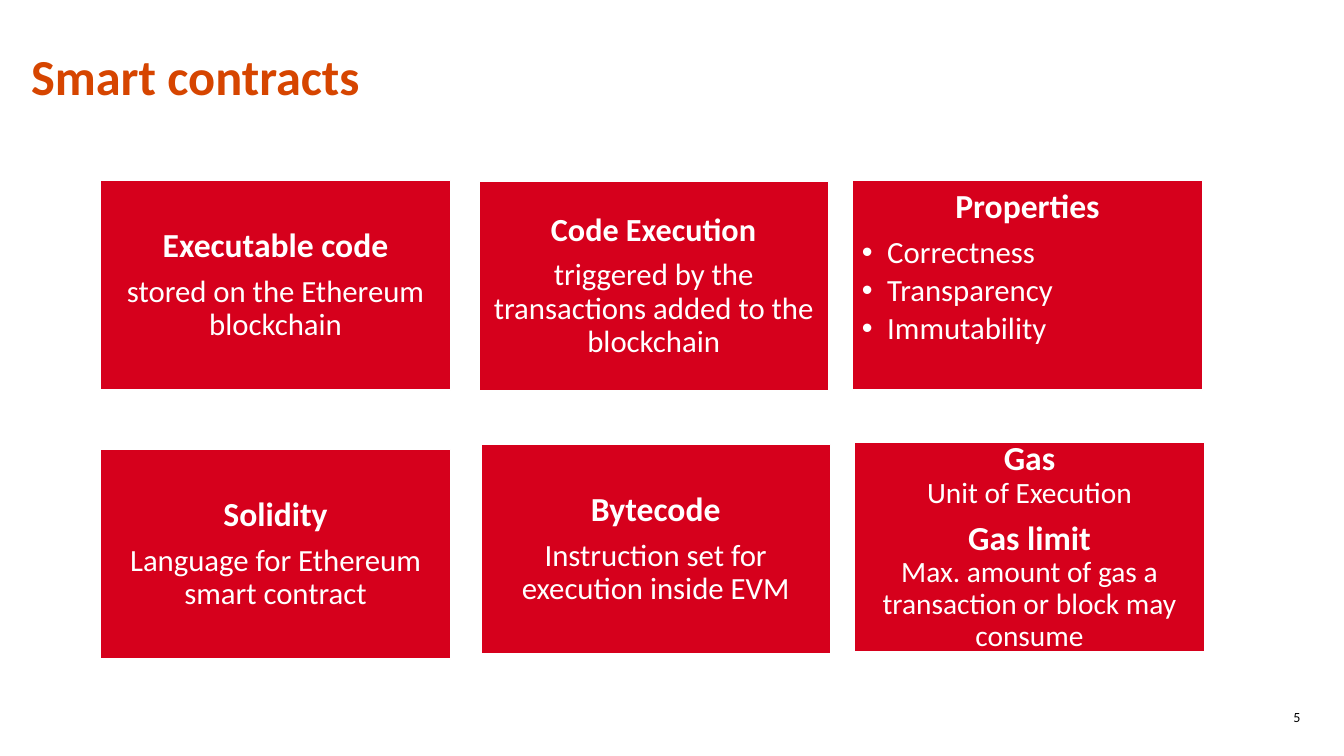
"""Build the smart contracts slide with six fact cards."""
from dataclasses import dataclass

from lxml.etree import SubElement
from pptx import Presentation
from pptx.dml.color import RGBColor
from pptx.enum.shapes import MSO_SHAPE
from pptx.enum.text import MSO_ANCHOR, MSO_AUTO_SIZE, PP_ALIGN
from pptx.oxml.ns import qn
from pptx.slide import Slide
from pptx.text.text import TextFrame, _Paragraph as Paragraph
from pptx.util import Cm, Pt

ORANGE = RGBColor(0xD6, 0x45, 0x00)
RED = RGBColor(0xD6, 0x00, 0x1C)
WHITE = RGBColor(0xFF, 0xFF, 0xFF)
BLACK = RGBColor(0x00, 0x00, 0x00)
FONT = "Calibri"
CARD_WIDTH, CARD_HEIGHT = Cm(8.81), Cm(5.28)
TITLE_ONLY = 5


@dataclass(frozen=True)
class Line:
    text: str
    size: int = 22
    bold: bool = False
    space_after: float = 8
    bullet: bool = False


@dataclass(frozen=True)
class Card:
    left: float
    top: float
    lines: tuple[Line, ...]
    anchor: MSO_ANCHOR = MSO_ANCHOR.MIDDLE
    inset: float = 0.25


def heading(text: str, size: int = 24, space_after: float = 8) -> Line:
    """Return a bold card heading."""
    return Line(text, size, True, space_after)


def bullet(text: str) -> Line:
    """Return a bulleted card line."""
    return Line(text, space_after=3.3, bullet=True)


CARDS = (
    Card(2.54, 4.55, (heading("Executable code"),
                      Line("stored on the Ethereum blockchain"))),
    Card(12.07, 4.57, (heading("Code Execution", 23),
                       Line("triggered by the transactions added to the blockchain"))),
    Card(21.49, 4.55, (heading("Properties"), bullet("Correctness"),
                       bullet("Transparency"), bullet("Immutability")),
         MSO_ANCHOR.TOP, 0.23),
    Card(2.54, 11.33, (heading("Solidity"),
                       Line("Language for Ethereum smart contract"))),
    Card(12.12, 11.2, (heading("Bytecode"),
                       Line("Instruction set for execution inside EVM"))),
    Card(21.54, 11.15, (heading("Gas", space_after=0),
                        Line("Unit of Execution", 21),
                        heading("Gas limit", space_after=0),
                        Line("Max. amount of gas a transaction or block may consume", 21))),
)


def format_runs(paragraph: Paragraph, size: int, color: RGBColor, bold: bool = False) -> None:
    """Apply the slide font to every run of a paragraph."""
    for run in paragraph.runs:
        run.font.name = FONT
        run.font.size = Pt(size)
        run.font.bold = bold
        run.font.color.rgb = color


def add_bullet(paragraph: Paragraph) -> None:
    """Give a paragraph a hanging bullet."""
    properties = paragraph._p.get_or_add_pPr()
    properties.set("marL", str(Cm(0.64)))
    properties.set("indent", str(-Cm(0.64)))
    SubElement(properties, qn("a:buFont")).set("typeface", "Arial")
    SubElement(properties, qn("a:buChar")).set("char", "•")


def fill_card(text_frame: TextFrame, lines: tuple[Line, ...]) -> None:
    """Write and format the lines of a card."""
    text_frame.text = "\n".join(line.text for line in lines)
    for paragraph, line in zip(text_frame.paragraphs, lines):
        paragraph.alignment = PP_ALIGN.LEFT if line.bullet else PP_ALIGN.CENTER
        paragraph.line_spacing = 0.9
        paragraph.space_after = Pt(line.space_after)
        if line.bullet:
            paragraph.level = 1
            add_bullet(paragraph)
        format_runs(paragraph, line.size, WHITE, line.bold)


def add_card(slide: Slide, card: Card) -> None:
    """Draw one red card with its text."""
    shape = slide.shapes.add_shape(MSO_SHAPE.RECTANGLE, Cm(card.left), Cm(card.top),
                                   CARD_WIDTH, CARD_HEIGHT)
    shape.shadow.inherit = False
    shape.fill.solid()
    shape.fill.fore_color.rgb = RED
    shape.line.color.rgb = WHITE
    shape.line.width = Pt(1)
    text_frame = shape.text_frame
    text_frame.word_wrap = True
    text_frame.vertical_anchor = card.anchor
    text_frame.margin_left = text_frame.margin_right = Cm(card.inset)
    text_frame.margin_top = text_frame.margin_bottom = Cm(card.inset)
    fill_card(text_frame, card.lines)


def add_title(slide: Slide) -> None:
    """Place and format the slide title."""
    title = slide.shapes.title
    title.left, title.top, title.width, title.height = Cm(0.53), Cm(0.56), Cm(27), Cm(2.87)
    text_frame = title.text_frame
    text_frame.text = "Smart contracts"
    text_frame.auto_size = MSO_AUTO_SIZE.NONE
    text_frame.vertical_anchor = MSO_ANCHOR.MIDDLE
    paragraph = text_frame.paragraphs[0]
    paragraph.alignment = PP_ALIGN.LEFT
    paragraph.line_spacing = Pt(38)
    format_runs(paragraph, 36, ORANGE, True)


def add_page_number(slide: Slide) -> None:
    """Write the page number at the lower right."""
    box = slide.shapes.add_textbox(Cm(25.4), Cm(17.73), Cm(7.62), Cm(1.02))
    box.text_frame.word_wrap = True
    box.text_frame.vertical_anchor = MSO_ANCHOR.TOP
    box.text_frame.text = "5"
    paragraph = box.text_frame.paragraphs[0]
    paragraph.alignment = PP_ALIGN.RIGHT
    format_runs(paragraph, 10, BLACK)


def main() -> None:
    """Build and save the presentation."""
    presentation = Presentation()
    presentation.slide_width, presentation.slide_height = Cm(33.87), Cm(19.05)
    slide = presentation.slides.add_slide(presentation.slide_layouts[TITLE_ONLY])
    add_title(slide)
    for card in CARDS:
        add_card(slide, card)
    add_page_number(slide)
    presentation.save("out.pptx")


if __name__ == "__main__":
    main()
